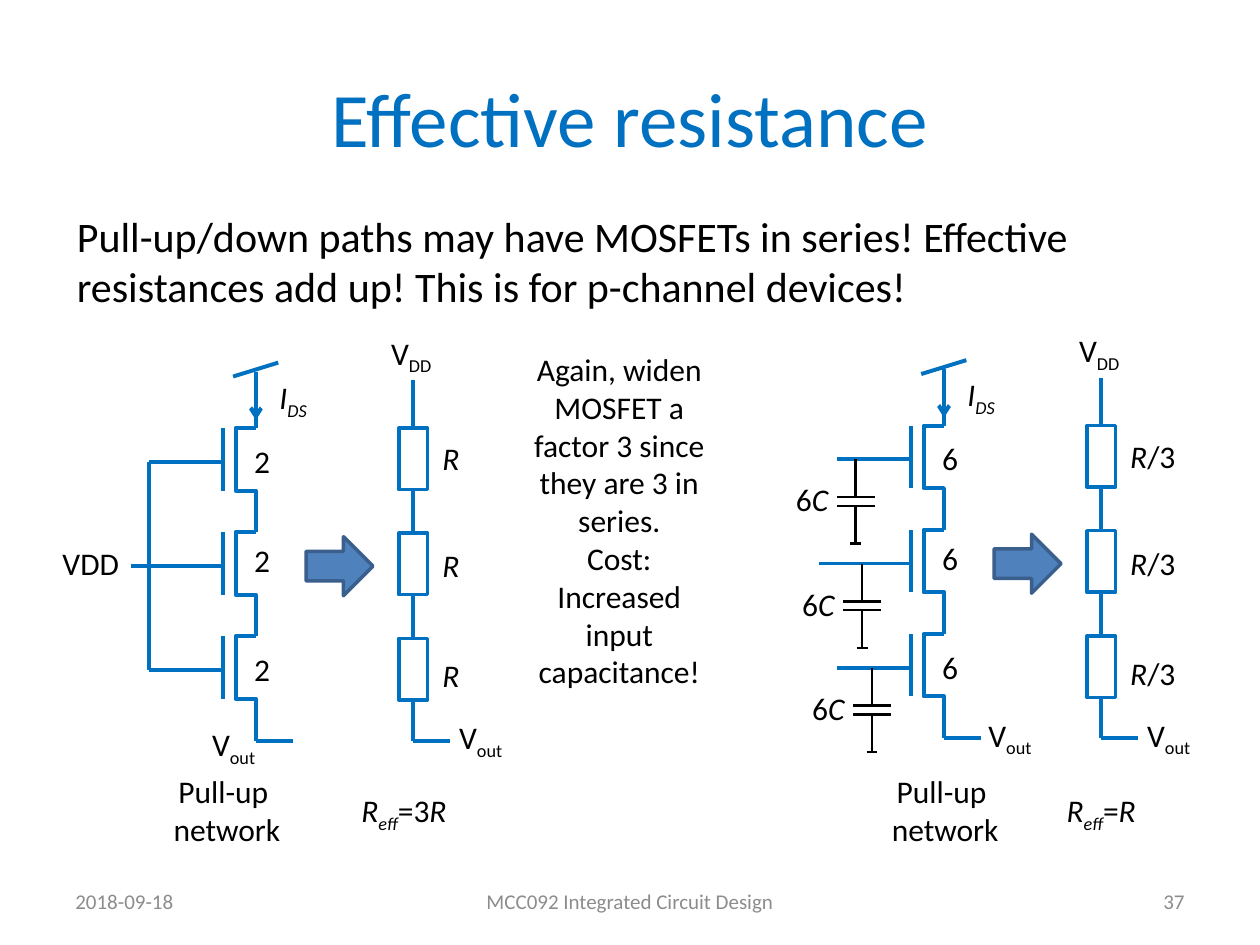
from lxml import etree
from pptx import Presentation
from pptx.dml.color import RGBColor
from pptx.enum import shapes, text
from pptx.oxml import ns
from pptx.util import Cm, Pt

COLORS = {
    "circuit": "0070C0",
    "ink": "000000",
    "paper": "FFFFFF",
    "arrow": "4F81BD",
    "arrow_edge": "3A5F8C",
    "footer": "8C8C8C",
}
FONT = "Calibri"
LEFT, CENTER, RIGHT = text.PP_ALIGN.LEFT, text.PP_ALIGN.CENTER, text.PP_ALIGN.RIGHT

STAGES = 3
PITCH = 2.1           # distance between transistors in series
FIRST_TOP = 2.03      # top of the first transistor
CHANNEL_X = 4.27
LADDER_X = 7.44
OUT_Y = FIRST_TOP + STAGES * PITCH
GATE_YS = [FIRST_TOP + 0.68 + stage * PITCH for stage in range(STAGES)]

# A label is a list of (text, style): "i" is italic, "_" is subscript.
VDD = [("V", ""), ("DD", "_")]
VOUT = [("V", ""), ("out", "_")]
IDS = [("I", "i"), ("DS", "i_")]
REFF = [("R", "i"), ("eff", "i_")]


def rgb(name):
    return RGBColor.from_string(COLORS[name])


def style_paragraph(paragraph, size, color, align):
    paragraph.alignment = align
    paragraph.font.name = FONT
    paragraph.font.size = Pt(size)
    paragraph.font.color.rgb = rgb(color)


def add_label(slide, x, y, width, *lines, height=1.02, size=18, color="ink",
              align=CENTER, wrap=True, anchor=text.MSO_ANCHOR.TOP):
    """Write each line, a string or a list of (text, style), as a paragraph."""
    frame = slide.shapes.add_textbox(Cm(x), Cm(y), Cm(width), Cm(height)).text_frame
    frame.word_wrap = wrap
    frame.vertical_anchor = anchor
    for index, line in enumerate(lines):
        paragraph = frame.add_paragraph() if index else frame.paragraphs[0]
        style_paragraph(paragraph, size, color, align)
        for words, style in [(line, "")] if isinstance(line, str) else line:
            run = paragraph.add_run()
            run.text = words
            if "i" in style:
                run.font.italic = True
            if "_" in style:
                run.font._element.set("baseline", "-25000")


def add_wire(slide, x1, y1, x2, y2, color="circuit", weight=2.25, arrow=False):
    wire = slide.shapes.add_connector(
        shapes.MSO_CONNECTOR.STRAIGHT, Cm(x1), Cm(y1), Cm(x2), Cm(y2))
    wire.line.color.rgb = rgb(color)
    wire.line.width = Pt(weight)
    if arrow:
        etree.SubElement(wire.line._get_or_add_ln(), ns.qn("a:tailEnd"), type="arrow")
    etree.SubElement(wire._element.spPr, ns.qn("a:effectLst"))


def add_block(slide, kind, x, y, width, height, fill, edge):
    block = slide.shapes.add_shape(kind, Cm(x), Cm(y), Cm(width), Cm(height))
    block.shadow.inherit = False
    block.fill.solid()
    block.fill.fore_color.rgb = rgb(fill)
    block.line.color.rgb = rgb(edge)
    block.line.width = Pt(2)


def add_transistor(slide, x, y):
    """Draw gate bar and channel; x is the drain line, y the source end."""
    bar, depth, length = 0.66, 0.41, 1.26
    add_wire(slide, x - bar, y, x - bar, y + length)
    outline = slide.shapes.build_freeform(Cm(x), Cm(y + PITCH))
    outline.add_line_segments(
        [(Cm(x), Cm(y + length)), (Cm(x - depth), Cm(y + length)),
         (Cm(x - depth), Cm(y)), (Cm(x), Cm(y))], close=False)
    channel = outline.convert_to_shape()
    channel.shadow.inherit = False
    channel.fill.background()
    channel.line.color.rgb = rgb("circuit")
    channel.line.width = Pt(2.25)


def add_transistor_chain(slide, left, top, width_label):
    x = left + CHANNEL_X
    add_wire(slide, x - 0.46, top + 0.99, x + 0.45, top + 0.71)
    add_wire(slide, x, top + 0.89, x, top + 1.87, arrow=True)
    add_wire(slide, x, top + 1.07, x, top + FIRST_TOP)
    add_label(slide, left + 4.22, top + 0.89, 1.6, IDS)
    gate_starts = (2.11, 1.75, 2.11)
    label_tops = (2.18, 4.19, 6.38)
    for stage in range(STAGES):
        add_transistor(slide, x, top + FIRST_TOP + stage * PITCH)
        gate_y = top + GATE_YS[stage]
        add_wire(slide, left + gate_starts[stage], gate_y, x - 0.66, gate_y)
        add_label(slide, left + 3.2, top + label_tops[stage], 2.39, width_label)
    add_wire(slide, x, top + OUT_Y, x + 0.74, top + OUT_Y)


def add_resistor_ladder(slide, left, top, resistance, label_width):
    x = left + LADDER_X
    add_label(slide, left + 6.6, top, 1.6, VDD)
    add_wire(slide, x, top + 1.07, x, top + OUT_Y)
    for stage, label_top in enumerate((2.13, 4.29, 6.5)):
        add_block(slide, shapes.MSO_SHAPE.RECTANGLE, x - 0.29,
                  top + FIRST_TOP + stage * 2.12, 0.58, 1.24, "paper", "circuit")
        add_label(slide, left + 7.77, top + label_top, label_width, resistance, wrap=False)
    add_wire(slide, x, top + OUT_Y, x + 0.74, top + OUT_Y)
    add_label(slide, left + 8, top + 7.75, 1.6, VOUT)


def add_capacitor(slide, x, y):
    """Hang a grounded capacitor from the point (x, y)."""
    lead, gap, plate, foot = 0.76, 0.18, 0.38, 0.11
    bottom = y + 2 * lead + gap
    strokes = [
        (x, y, x, y + lead),
        (x - plate, y + lead, x + plate, y + lead),
        (x - plate, y + lead + gap, x + plate, y + lead + gap),
        (x, y + lead + gap, x, bottom),
        (x - foot, bottom, x + foot, bottom),
    ]
    for stroke in strokes:
        add_wire(slide, *stroke, color="ink", weight=1.5)
    add_label(slide, x - 1.68, y + 0.3, 1.6, [("6", ""), ("C", "i")])


def add_circuit(slide, left, top, width_label, resistance, label_width):
    """Draw a pull-up chain, an arrow and the equivalent resistors."""
    add_transistor_chain(slide, left, top, width_label)
    add_block(slide, shapes.MSO_SHAPE.RIGHT_ARROW, left + 5.28, top + 4.22,
              1.35, 1.19, "arrow", "arrow_edge")
    add_resistor_ladder(slide, left, top, resistance, label_width)


def add_unit_circuit(slide, left, top):
    add_circuit(slide, left, top, "2", [("R", "i")], 0.86)
    add_wire(slide, left + 2.11, top + GATE_YS[0], left + 2.11, top + GATE_YS[-1])
    add_label(slide, left, top + 4.24, 1.88, "VDD")
    add_label(slide, left + 3.02, top + 7.9, 1.6, VOUT)
    add_label(slide, left + 2.34, top + 8.84, 2.69, "Pull-up ", "network",
              height=1.8, wrap=False)
    add_label(slide, left + 6.1, top + 9.22, 2.31, REFF + [("=3", ""), ("R", "i")], wrap=False)


def add_widened_circuit(slide, left, top):
    add_circuit(slide, left, top, "6", [("R", "i"), ("/3", "")], 1.42)
    for x, gate_y in zip((2.49, 2.62, 2.82), GATE_YS):
        add_capacitor(slide, left + x, top + gate_y)
    add_label(slide, left + 4.8, top + 7.75, 1.6, VOUT)
    add_label(slide, left + 2.95, top + 8.89, 2.69, "Pull-up ", "network",
              height=1.8, wrap=False)
    add_label(slide, left + 6.45, top + 9.27, 1.98, REFF + [("=", ""), ("R", "i")], wrap=False)


def add_heading(slide, words):
    title = slide.shapes.title
    title.left, title.top, title.width, title.height = Cm(1.27), Cm(0.76), Cm(22.86), Cm(3.18)
    title.text_frame.text = words
    title.text_frame.vertical_anchor = text.MSO_ANCHOR.MIDDLE
    style_paragraph(title.text_frame.paragraphs[0], 44, "circuit", CENTER)


def add_footer(slide, top):
    for x, width, words, align in (
            (1.27, 5.93, "2018-09-18", LEFT),
            (8.68, 8.04, "MCC092 Integrated Circuit Design", CENTER),
            (18.2, 5.93, "37", RIGHT)):
        add_label(slide, x, top, width, words, size=12, color="footer", align=align,
                  anchor=text.MSO_ANCHOR.MIDDLE)


def main():
    deck = Presentation()
    deck.slide_width, deck.slide_height = Cm(25.4), Cm(19.05)
    slide = deck.slides.add_slide(deck.slide_layouts[5])
    add_heading(slide, "Effective resistance")
    add_label(slide, 1.3, 4.11, 22.86,
              "Pull-up/down paths may have MOSFETs in series! Effective "
              "resistances add up! This is for p-channel devices!",
              height=2.69, size=24, align=LEFT)
    add_unit_circuit(slide, 0.89, 6.6)
    add_label(slide, 10.49, 6.93, 3.99,
              "Again, widen MOSFET a factor 3 since they are 3 in series.",
              "Cost:", "Increased input capacitance!", height=7.19)
    add_widened_circuit(slide, 14.76, 6.55)
    add_footer(slide, 17.65)
    deck.save("out.pptx")


if __name__ == "__main__":
    main()
